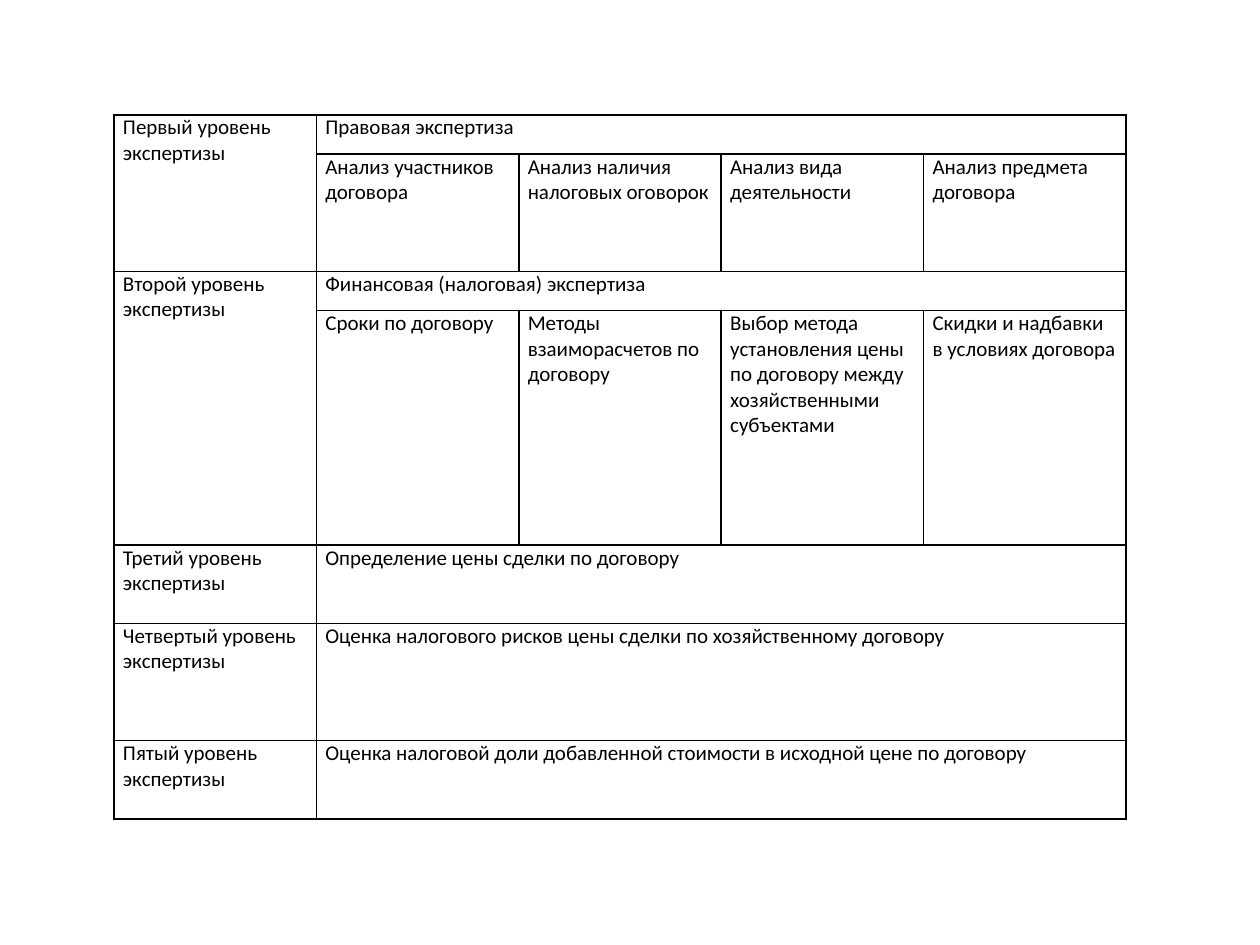
from lxml import etree
from pptx import Presentation, util as u
from pptx.dml.color import RGBColor
from pptx.oxml.ns import qn

PX = 914400 / 126


def px(length):
    return u.Emu(round(length * PX))


def write_cell(cell, content, font="Calibri", size=12, color="000000", border=1):
    cell.margin_left = cell.margin_right = px(9)
    cell.margin_top = cell.margin_bottom = 0
    paragraph = cell.text_frame.paragraphs[0]
    paragraph.text = content
    for run in paragraph.runs:
        run.font.name = font
        run.font.size = u.Pt(size)
        run.font.color.rgb = RGBColor.from_string(color)
    # Keeps cells without text from stretching their row
    etree.SubElement(paragraph._p, qn("a:endParaRPr"), sz=str(size * 100))
    properties = cell._tc.get_or_add_tcPr()
    for side in ("lnL", "lnR", "lnT", "lnB"):
        line = etree.SubElement(properties, qn("a:" + side), w=str(u.Pt(border)))
        fill = etree.SubElement(line, qn("a:solidFill"))
        etree.SubElement(fill, qn("a:srgbClr"), val=color)
    cell.fill.background()


presentation = Presentation()
presentation.slide_width, presentation.slide_height = px(1260), px(945)
slide = presentation.slides.add_slide(presentation.slide_layouts[6])

# Level, heading across the row, and details below it
levels = [
    ("Первый уровень экспертизы", "Правовая экспертиза",
     ["Анализ участников договора", "Анализ наличия налоговых оговорок",
      "Анализ вида деятельности", "Анализ предмета договора"]),
    ("Второй уровень экспертизы", "Финансовая (налоговая) экспертиза",
     ["Сроки по договору", "Методы взаиморасчетов по договору",
      "Выбор метода установления цены по договору между хозяйственными субъектами",
      "Скидки и надбавки\nв условиях договора"]),
    ("Третий уровень экспертизы", "Определение цены сделки по договору", []),
    ("Четвертый уровень экспертизы",
     "Оценка налогового рисков цены сделки по хозяйственному договору", []),
    ("Пятый уровень экспертизы",
     "Оценка налоговой доли добавленной стоимости в исходной цене по договору", []),
]

# Grid: equal columns, rows in multiples of one text line
row_lines = [1, 3, 1, 6, 2, 3, 2]
column_count = 5
width, height = 1012, 704
table = slide.shapes.add_table(len(row_lines), column_count, px(114), px(115),
                               px(width), px(height)).table
table.first_row = table.horz_banding = False
for column in table.columns:
    column.width = px(width / column_count)
for row, lines in zip(table.rows, row_lines):
    row.height = px(height * lines / sum(row_lines))

# Contents
rows = []
for level, heading, details in levels:
    top = len(rows)
    rows.append([level, heading, "", "", ""])
    table.cell(top, 1).merge(table.cell(top, column_count - 1))
    if details:
        rows.append(["", *details])
        table.cell(top, 0).merge(table.cell(top + 1, 0))
for row, contents in zip(table.rows, rows):
    for cell, content in zip(row.cells, contents):
        write_cell(cell, content)

presentation.save("out.pptx")
